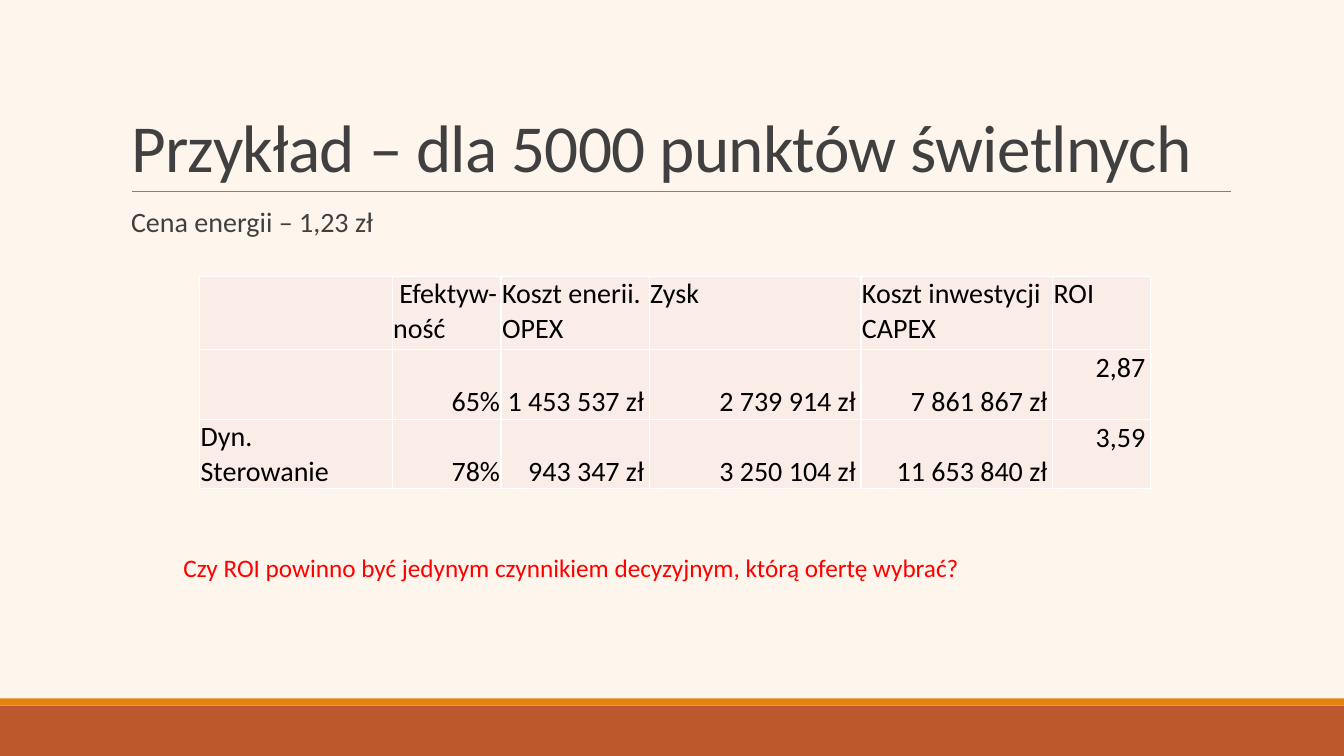
from lxml import etree
from pptx import Presentation
from pptx import util as u
from pptx.dml.color import RGBColor
from pptx.enum import shapes, text
from pptx.oxml import parse_xml
from pptx.oxml.ns import qn

COLORS = {
    "background": "FEF5EC", "band": "BD582C", "stripe": "E48312", "rule": "808080",
    "heading": "404040", "cell": "FAEDE7", "border": "FFFFFF", "ink": "000000", "question": "FF0000",
}
FONT = "Calibri"
LEFT, RIGHT = text.PP_ALIGN.LEFT, text.PP_ALIGN.RIGHT
TOP, BOTTOM = text.MSO_ANCHOR.TOP, text.MSO_ANCHOR.BOTTOM
COLUMN_WIDTHS = [1.91, 1.08, 1.47, 2.1, 1.9, 0.97]
ROW_HEIGHTS = [0.73, 0.69, 0.69]
ROWS = [
    ["", " Efektyw- ność", "Koszt enerii. OPEX", "Zysk", "Koszt inwestycji CAPEX", "ROI"],
    ["", "65%", "1 453 537 zł", "2 739 914 zł", "7 861 867 zł", "2,87"],
    ["Dyn.\nSterowanie", "78%", "943 347 zł", "3 250 104 zł", "11 653 840 zł", "3,59"],
]


class SlideBuilder:
    """Holds the colours, the font and the page, and draws each kind of element."""

    def __init__(self, page):
        self.page = page
        page.background.fill.solid()
        page.background.fill.fore_color.rgb = self.color("background")

    def color(self, name):
        return RGBColor.from_string(COLORS[name])

    def area(self, *lengths):
        return [u.Inches(length) for length in lengths]

    def style(self, frame, size, color, align=LEFT, spacing=1.0):
        for para in frame.paragraphs:
            para.alignment = align
            para.line_spacing = spacing
            para.font.name = FONT
            para.font.size = u.Pt(size)
            para.font.color.rgb = self.color(color)

    def title(self, words, left, top, width, height):
        box = self.page.shapes.title
        box.left, box.top, box.width, box.height = self.area(left, top, width, height)
        frame = box.text_frame
        frame.text = words
        frame.vertical_anchor = BOTTOM
        frame.auto_size = text.MSO_AUTO_SIZE.NONE
        self.style(frame, 48, "heading", spacing=0.85)
        frame.paragraphs[0].runs[0].font._element.set("spc", "-50")

    def textbox(self, words, lengths, size, color, side=0.1, spacing=1.0):
        frame = self.page.shapes.add_textbox(*self.area(*lengths)).text_frame
        frame.word_wrap = True
        frame.margin_left = frame.margin_right = u.Inches(side)
        frame.text = words
        self.style(frame, size, color, spacing=spacing)

    def bar(self, color, *lengths):
        shape = self.page.shapes.add_shape(shapes.MSO_SHAPE.RECTANGLE, *self.area(*lengths))
        shape.shadow.inherit = False
        shape.fill.solid()
        shape.fill.fore_color.rgb = self.color(color)
        shape.line.fill.background()

    def rule(self, *ends):
        line = self.page.shapes.add_connector(shapes.MSO_CONNECTOR.STRAIGHT, *self.area(*ends))
        line.line.color.rgb = self.color("rule")
        line.line.width = u.Pt(0.5)
        etree.SubElement(line._element.spPr, qn("a:effectLst"))

    def borders(self, cell):
        properties = cell._tc.get_or_add_tcPr()
        for position, side in enumerate(("lnL", "lnR", "lnT", "lnB")):
            properties.insert(position, parse_xml(
                f'<a:{side} xmlns:a="http://schemas.openxmlformats.org/drawingml/2006/main" w="12700">'
                f'<a:solidFill><a:srgbClr val="{COLORS["border"]}"/></a:solidFill></a:{side}>'))

    def cell(self, cell, words, align, anchor, right):
        cell.margin_left = cell.margin_top = u.Inches(0.01)
        cell.margin_right, cell.margin_bottom = u.Inches(right), 0
        cell.vertical_anchor = anchor
        cell.text = words
        self.style(cell.text_frame, 20, "ink", align)
        cell.fill.solid()
        cell.fill.fore_color.rgb = self.color("cell")
        self.borders(cell)

    def table(self, left, top):
        lengths = self.area(left, top, sum(COLUMN_WIDTHS), sum(ROW_HEIGHTS))
        table = self.page.shapes.add_table(len(ROWS), len(COLUMN_WIDTHS), *lengths).table
        table.first_row = table.horz_banding = False
        for column, width in zip(table.columns, COLUMN_WIDTHS):
            column.width = u.Inches(width)
        for row, height in zip(table.rows, ROW_HEIGHTS):
            row.height = u.Inches(height)
        for r, row in enumerate(ROWS):
            for c, words in enumerate(row):
                number = r > 0 and c > 0
                anchor = BOTTOM if r > 0 and c < len(row) - 1 else TOP
                right = 0.05 if number and c > 1 else 0.01
                self.cell(table.cell(r, c), words, RIGHT if number else LEFT, anchor, right)


def main():
    deck = Presentation()
    deck.slide_width, deck.slide_height = u.Inches(13.33), u.Inches(7.5)
    slide = SlideBuilder(deck.slides.add_slide(deck.slide_layouts[5]))
    slide.bar("band", 0, 7, 13.33, 0.5)
    slide.bar("stripe", 0, 6.93, 13.33, 0.07)
    slide.rule(1.31, 1.9, 12.21, 1.9)
    slide.title("Przykład – dla 5000 punktów świetlnych", 1.2, 0.31, 11, 1.59)
    slide.textbox("Cena energii – 1,23 zł", (1.3, 2.02, 10.9, 0.45), 20, "heading", 0, 0.9)
    slide.table(1.98, 2.74)
    slide.textbox("Czy ROI powinno być jedynym czynnikiem decyzyjnym, którą ofertę wybrać?",
                  (1.72, 5.43, 10.41, 0.4), 18, "question")
    deck.save("out.pptx")


if __name__ == "__main__":
    main()
